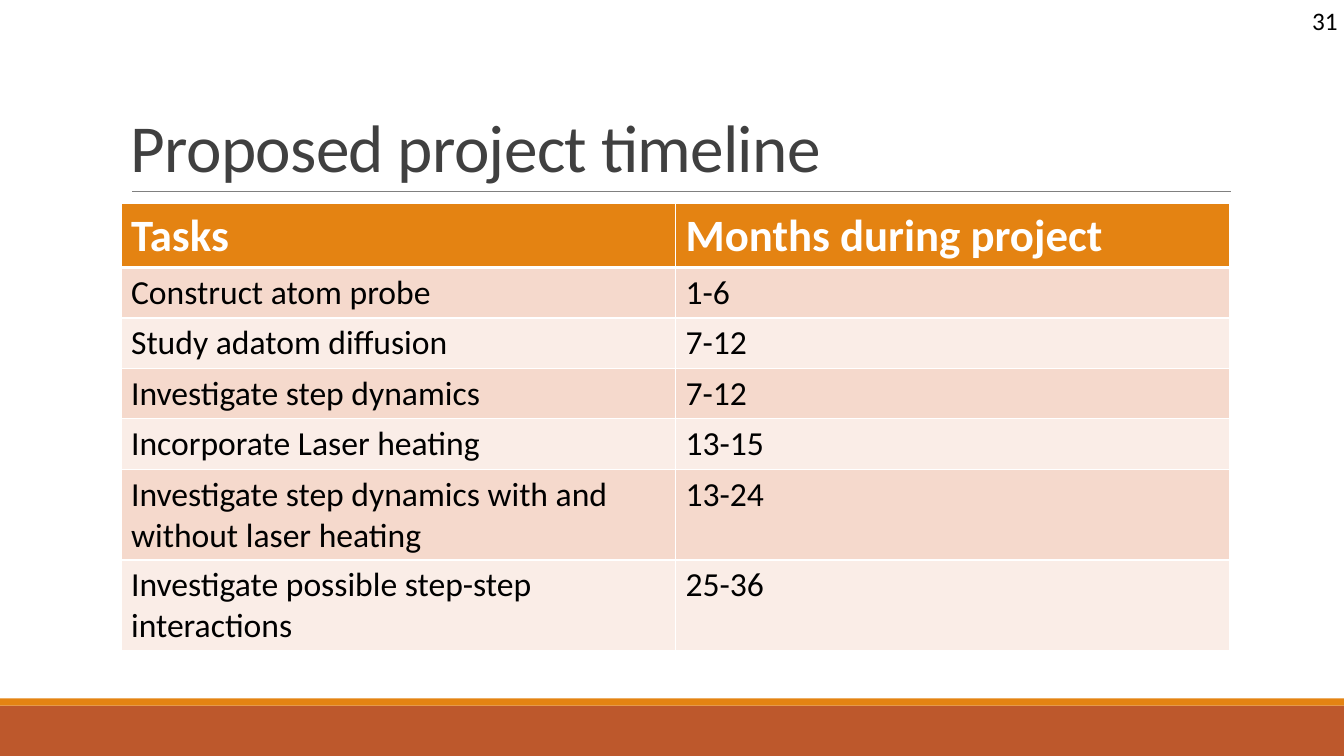
from lxml.etree import SubElement
from pptx import Presentation
from pptx.dml.color import RGBColor as RGB
from pptx.enum.shapes import MSO_CONNECTOR as Link, MSO_SHAPE as Shape
from pptx.enum.text import MSO_ANCHOR as Anchor, PP_ALIGN as Align
from pptx.oxml.ns import qn
from pptx.util import Inches, Pt

TITLE = "Proposed project timeline"
PAGE = "31"
TASKS = [
    ("Tasks", "Months during project"),
    ("Construct atom probe", "1-6"),
    ("Study adatom diffusion", "7-12"),
    ("Investigate step dynamics", "7-12"),
    ("Incorporate Laser heating", "13-15"),
    ("Investigate step dynamics with and without laser heating", "13-24"),
    ("Investigate possible step-step interactions", "25-36"),
]

FONT = "Calibri"
WHITE = RGB(0xFF, 0xFF, 0xFF)
BLACK = RGB(0, 0, 0)
DARK = RGB(0x40, 0x40, 0x40)
GRAY = RGB(0x80, 0x80, 0x80)
ORANGE = RGB(0xE4, 0x83, 0x12)
RUST = RGB(0xBD, 0x58, 0x2C)
BANDS = RGB(0xFA, 0xED, 0xE7), RGB(0xF5, 0xD9, 0xCC)

WIDE, HIGH = 13.33, 7.5
LEFT, SPAN = 1.2, 11
FOOT, STRIPE = 0.5, 0.07
RULE, TOP = 1.9, 2.02
ROW = 0.41


def style(para, size, color, bold=False):
    font = para.font
    font.name, font.size, font.bold = FONT, Pt(size), bold
    font.color.rgb = color


def add_band(slide, top, high, color):
    band = slide.shapes.add_shape(
        Shape.RECTANGLE, 0, Inches(top), Inches(WIDE), Inches(high))
    band.shadow.inherit = False
    band.fill.solid()
    band.fill.fore_color.rgb = color
    band.line.fill.background()


def add_rule(slide):
    ends = [Inches(n) for n in (LEFT + 0.11, RULE, LEFT + SPAN + 0.01, RULE)]
    rule = slide.shapes.add_connector(Link.STRAIGHT, *ends)
    rule.line.color.rgb = GRAY
    rule.line.width = Pt(0.5)
    SubElement(rule._element.spPr, qn("a:effectLst"))


def add_text(slide, text, box, size, color):
    frame = slide.shapes.add_textbox(*[Inches(n) for n in box]).text_frame
    frame.word_wrap = True
    para = frame.paragraphs[0]
    para.text = text
    style(para, size, color)
    return frame, para


def edge(cell, side, width):
    line = SubElement(cell._tc.get_or_add_tcPr(), qn("a:ln" + side), w=str(Pt(width)))
    fill = SubElement(line, qn("a:solidFill"))
    SubElement(fill, qn("a:srgbClr"), val=str(WHITE))


def add_tasks(slide):
    frame = slide.shapes.add_table(
        len(TASKS), len(TASKS[0]), Inches(LEFT), Inches(TOP),
        Inches(SPAN), Inches(ROW * len(TASKS)))
    for r, task in enumerate(TASKS):
        head = r == 0
        for c, text in enumerate(task):
            cell = frame.table.cell(r, c)
            # The line under the heading row is shared by two rows of cells.
            widths = {"L": 1, "R": 1, "T": 3 if r == 1 else 1, "B": 3 if head else 1}
            for side, width in widths.items():
                edge(cell, side, width)
            cell.fill.solid()
            cell.fill.fore_color.rgb = ORANGE if head else BANDS[r % 2]
            cell.text = text
            style(cell.text_frame.paragraphs[0], 32 if head else 24,
                  WHITE if head else BLACK, head)


def main():
    deck = Presentation()
    deck.slide_width, deck.slide_height = Inches(WIDE), Inches(HIGH)
    slide = deck.slides.add_slide(deck.slide_layouts[6])

    add_band(slide, HIGH - FOOT, FOOT, RUST)
    add_band(slide, HIGH - FOOT - STRIPE, STRIPE, ORANGE)
    add_rule(slide)

    frame, para = add_text(slide, TITLE, (LEFT, 0.31, SPAN, RULE - 0.31), 48, DARK)
    frame.vertical_anchor = Anchor.BOTTOM
    para.line_spacing = 0.85
    para.runs[0].font._element.set("spc", "-50")

    add_tasks(slide)
    _, para = add_text(slide, PAGE, (11.64, 0, 3, 0.4), 18, BLACK)
    para.alignment = Align.CENTER
    deck.save("out.pptx")


if __name__ == "__main__":
    main()
